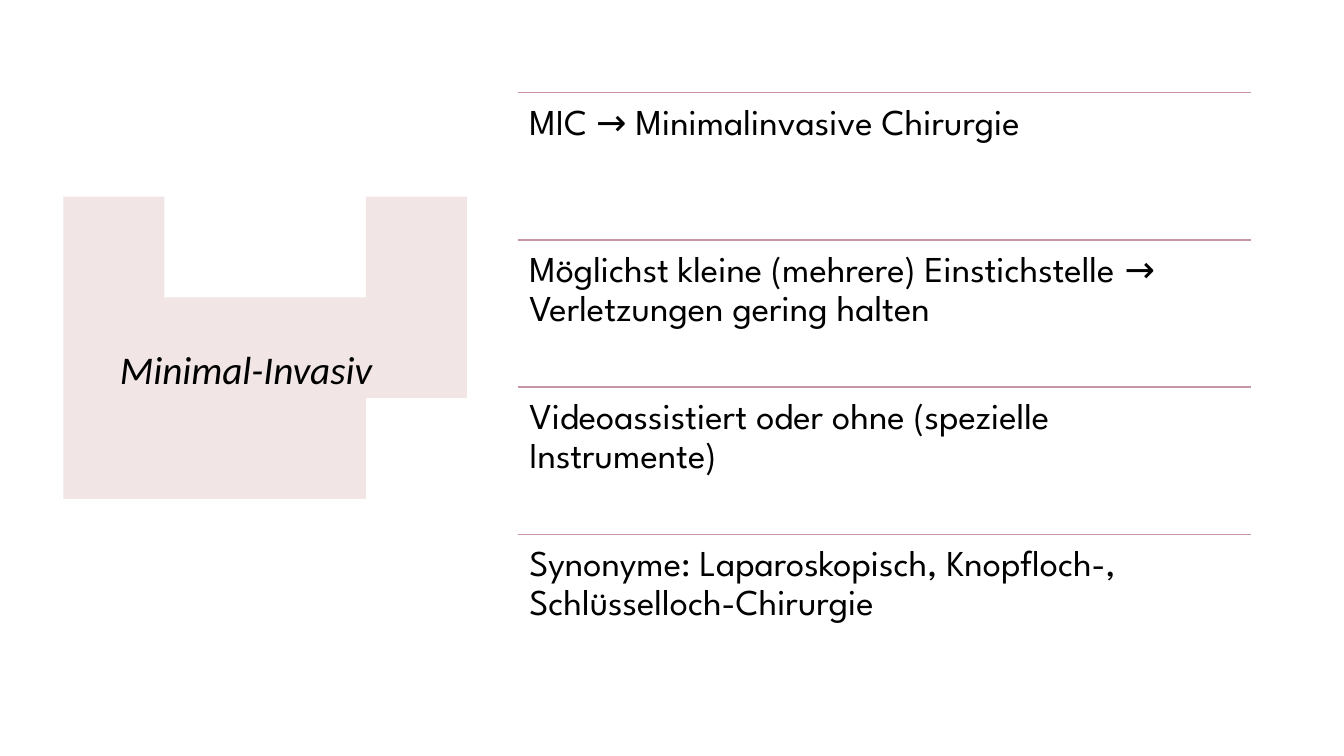
from itertools import cycle
from typing import NamedTuple

from lxml.etree import SubElement
from pptx import Presentation
from pptx.dml.color import RGBColor
from pptx.enum.shapes import MSO_CONNECTOR as Connector
from pptx.enum.text import MSO_ANCHOR as Anchor
from pptx.oxml.ns import qn
from pptx.util import Inches, Pt

INK, RULE_PINK, BRUSH_PINK = "000000", "C696A8", "F1E6E5"
BRUSH_BOX = (0.63, 1.95, 4.14, 3.17)
TITLE_BOX = (1.09, 2.87, 3.29, 1.64)
FACTS_BOX = (5.14, 0.92, 7.27, 5.84)

TITLE = "Minimal-Invasiv"
FACTS = [
    "MIC → Minimalinvasive Chirurgie",
    "Möglichst kleine (mehrere) Einstichstelle → Verletzungen gering halten",
    "Videoassistiert oder ohne (spezielle Instrumente)",
    "Synonyme: Laparoskopisch, Knopfloch-, Schlüsselloch-Chirurgie",
]


class Edge(NamedTuple):
    """A Bézier edge of the stroke; roughness shifts every other point."""
    start: tuple
    bend_out: tuple
    bend_in: tuple
    end: tuple
    roughness: float = 0


class Tuft(NamedTuple):
    """A row of bristles, evenly spaced from the first to the last."""
    first_tip: tuple
    last_tip: tuple
    first_root: tuple
    last_root: tuple
    bristles: int


EDGES = [
    Edge((0.27, 0.25), (0.5, 0.4), (0.9, 0.68), (1.44, 0.68)),
    Edge((1.44, 0.68), (2.3, 0.62), (2.9, 0.5), (3.67, 0)),
    Edge((3.67, 0), (3.95, 0.3), (3.95, 0.5), (3.84, 0.78), 0.02),
    Edge((3.84, 0.78), (4, 1), (4.1, 1.1), (4.14, 1.4), 0.02),
    Edge((4.14, 1.4), (4.14, 1.75), (3.9, 1.75), (3.8, 2.05), 0.01),
    Edge((3.8, 2.05), (3.64, 2.3), (2.94, 3.09), (1.92, 3.16)),
    Edge((1.92, 3.16), (1.4, 3.2), (1, 3.15), (0.64, 3)),
]
TUFTS = [
    Tuft((0.39, 2.86), (0, 2.25), (0.52, 2.8), (0.2, 2.15), 5),
    Tuft((0.01, 2.15), (0.1, 1.55), (0.24, 2.02), (0.3, 1.56), 3),
    Tuft((0.05, 1.42), (0.09, 1.27), (0.1, 1.37), (0.49, 1.28), 2),
    Tuft((0.15, 0.95), (0.09, 0.61), (0.4, 1), (0.69, 0.91), 4),
    Tuft((0.31, 0.59), (0.24, 0.27), (0.5, 0.66), (0.38, 0.36), 3),
]


def rgb(hex_code):
    """Turn a hex string into a colour."""
    return RGBColor.from_string(hex_code)


def between(first, last, share):
    """Return the point that lies a share of the way from first to last."""
    return tuple(a + (b - a) * share for a, b in zip(first, last))


def edge_points(edge, steps=16):
    """Sample a Bézier edge by repeated interpolation."""
    for step, shift in zip(range(steps), cycle((0, edge.roughness))):
        points = edge[:4]
        while len(points) > 1:
            points = [between(a, b, step / steps)
                      for a, b in zip(points, points[1:])]
        x, y = points[0]
        yield x - shift, y


def tuft_points(tuft):
    """Zigzag between the tips and the roots of a tuft."""
    for bristle in range(tuft.bristles):
        share = bristle / (tuft.bristles - 1)
        yield between(tuft.first_tip, tuft.last_tip, share)
        yield between(tuft.first_root, tuft.last_root, share)


def add_brush_stroke(slide, box):
    """Draw the pale brush stroke from the top left corner of its box."""
    left, top, _, _ = box
    outline = [point for edge in EDGES for point in edge_points(edge)]
    outline += [EDGES[-1].end]
    outline += [point for tuft in TUFTS for point in tuft_points(tuft)]
    start, *rest = outline
    builder = slide.shapes.build_freeform(*start, scale=Inches(1))
    builder.add_line_segments(rest, close=True)
    brush = builder.convert_to_shape(Inches(left), Inches(top))
    brush.shadow.inherit = False
    brush.fill.solid()
    brush.fill.fore_color.rgb = rgb(BRUSH_PINK)
    brush.line.fill.background()


def add_text(slide, box, wording, font_name, size, inset_x, inset_y,
             anchor=Anchor.TOP, italic=False):
    """Place one wrapped paragraph in a box."""
    frame = slide.shapes.add_textbox(*map(Inches, box)).text_frame
    frame.word_wrap = True
    frame.vertical_anchor = anchor
    frame.margin_left = frame.margin_right = Inches(inset_x)
    frame.margin_top = frame.margin_bottom = Inches(inset_y)
    paragraph = frame.paragraphs[0]
    paragraph.line_spacing = 0.9
    run = paragraph.add_run()
    run.text = wording
    run.font.name = font_name
    run.font.size = Pt(size)
    run.font.italic = italic
    run.font.color.rgb = rgb(INK)


def add_title(slide, box):
    """Set the italic title, centred vertically in its box."""
    add_text(slide, box, TITLE, "Calibri", 28, 0.1, 0.05,
             Anchor.MIDDLE, italic=True)


def add_facts(slide, box):
    """Stack the facts in equal rows, each under a thin rule."""
    left, top, width, height = box
    row_height = height / len(FACTS)
    for index, fact in enumerate(FACTS):
        row_top = top + index * row_height
        rule = slide.shapes.add_connector(
            Connector.STRAIGHT, Inches(left), Inches(row_top),
            Inches(left + width), Inches(row_top))
        rule.line.color.rgb = rgb(RULE_PINK)
        rule.line.width = Pt(1)
        SubElement(rule._element.spPr, qn("a:effectLst"))
        add_text(slide, (left, row_top, width, row_height), fact,
                 "League Spartan", 26, 0.11, 0.11)


def main():
    """Build and save the slide."""
    deck = Presentation()
    deck.slide_width, deck.slide_height = Inches(13.33), Inches(7.5)
    slide = deck.slides.add_slide(deck.slide_layouts[6])
    add_brush_stroke(slide, BRUSH_BOX)
    add_title(slide, TITLE_BOX)
    add_facts(slide, FACTS_BOX)
    deck.save("out.pptx")


if __name__ == "__main__":
    main()
